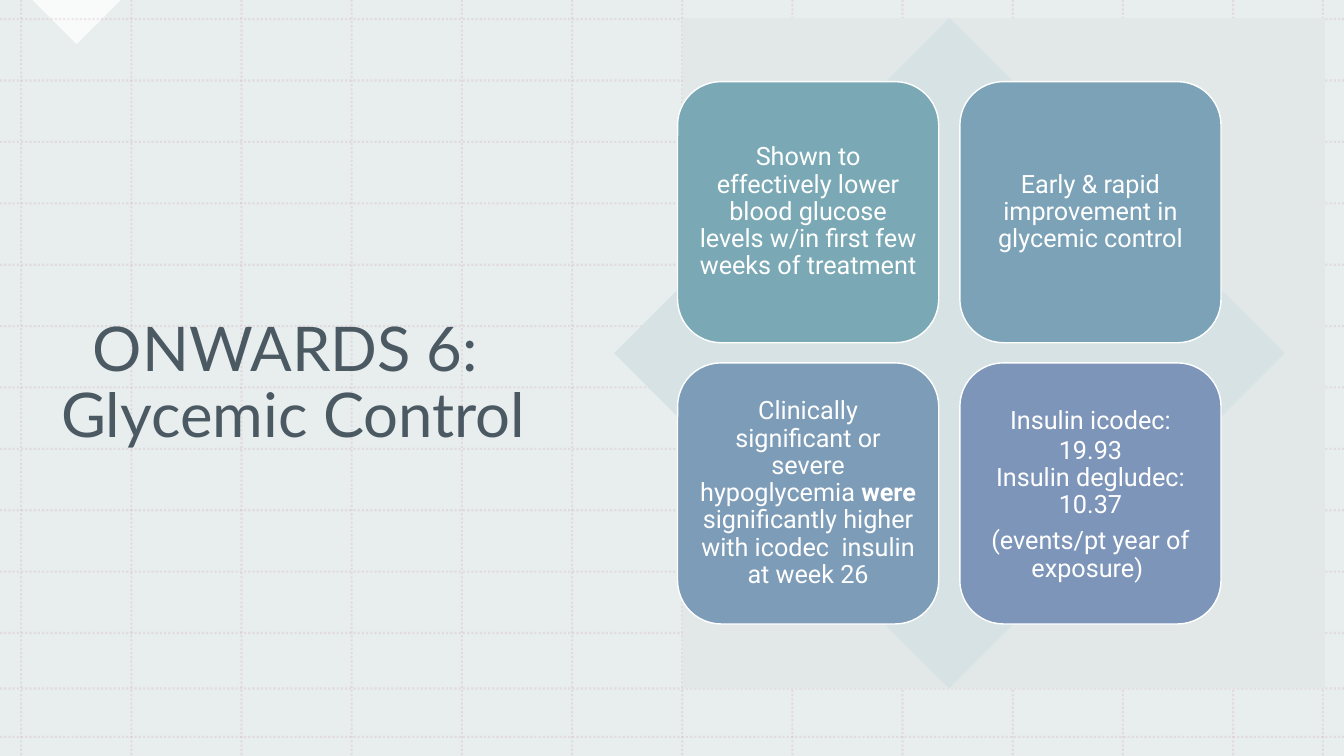
from lxml import etree
from pptx import Presentation
from pptx.dml.color import RGBColor
from pptx.enum.dml import MSO_LINE
from pptx.enum.shapes import MSO_CONNECTOR, MSO_SHAPE
from pptx.enum.text import MSO_ANCHOR, PP_ALIGN
from pptx.oxml.ns import qn
from pptx.util import Inches, Pt

STRAIGHT = MSO_CONNECTOR.STRAIGHT
RECTANGLE, DIAMOND = MSO_SHAPE.RECTANGLE, MSO_SHAPE.DIAMOND
ROUNDED, RIGHT_TRIANGLE = MSO_SHAPE.ROUNDED_RECTANGLE, MSO_SHAPE.RIGHT_TRIANGLE
DOTTED = MSO_LINE.ROUND_DOT
MIDDLE, CENTER = MSO_ANCHOR.MIDDLE, PP_ALIGN.CENTER
WIDTH, HEIGHT = 13.33, 7.5


def paint(fill, color, opacity=100):
    fill.solid()
    fill.fore_color.rgb = RGBColor.from_string(color)
    if opacity < 100:
        srgb = fill._xPr.find(qn("a:solidFill")).find(qn("a:srgbClr"))
        etree.SubElement(srgb, qn("a:alpha")).set("val", str(opacity * 1000))


def add_block(kind, left, top, width, height, color, opacity=100):
    block = slide.shapes.add_shape(
        kind, Inches(left), Inches(top), Inches(width), Inches(height))
    block.shadow.inherit = False
    paint(block.fill, color, opacity)
    block.line.fill.background()
    return block


prs = Presentation()
prs.slide_width, prs.slide_height = Inches(WIDTH), Inches(HEIGHT)
slide = prs.slides.add_slide(prs.slide_layouts[6])

# Background and corner tip
paint(slide.background.fill, "E8EDED")
corner = add_block(RIGHT_TRIANGLE, 0.45, -0.31, 0.62, 0.62, "FFFFFF", 75)
corner.rotation = 315

# Dotted grid
column_pitch = (12.23 - 0.21) / 11
row_pitch = (6.28 - 0.19) / 10
columns = [0.21 + column_pitch * i for i in range(12)] + [13.12]
rows = [0.19 + row_pitch * i for i in range(11)] + [6.83, 7.31]
grid = [(x, 0, x, HEIGHT) for x in columns] + [(0, y, WIDTH, y) for y in rows]
for ends in grid:
    rule = slide.shapes.add_connector(STRAIGHT, *[Inches(v) for v in ends])
    paint(rule.line.fill, "C796A6", 20)
    rule.line.width = Pt(1.5)
    rule.line.dash_style = DOTTED
    etree.SubElement(rule._element.spPr, qn("a:effectLst"))

# Title
title = slide.shapes.add_textbox(
    Inches(0.5), Inches(0.79), Inches(4.82), Inches(6.05)).text_frame
title.word_wrap = True
title.vertical_anchor = MIDDLE
heading = title.paragraphs[0]
heading.text = "ONWARDS 6: \vGlycemic Control"
heading.alignment = CENTER
heading.line_spacing = 0.9
for run in heading.runs:
    run.font.name = "Lato"
    run.font.size = Pt(44)
    paint(run.font.fill, "243441", 80)

# Panel and diamond behind the cards
add_block(RECTANGLE, 6.77, 0.18, 6.37, 6.65, "E2E8E8")
add_block(DIAMOND, 6.09, 0.18, 6.65, 6.65, "D7E2E5")

# Four cards: colour, then paragraphs of (text, bold) runs
cards = [
    ("7AA9B5", [[("Shown to effectively lower blood glucose levels w/in first "
                  "few weeks of treatment", False)]]),
    ("7BA2B7", [[("Early & rapid improvement in glycemic control", False)]]),
    ("7D9CB8", [[("Clinically significant or severe hypoglycemia ", False),
                 ("were", True),
                 (" significantly higher with icodec  insulin at week 26", False)]]),
    ("7E95BA", [[("Insulin icodec: 19.93", False)],
                [("Insulin degludec: 10.37", False)],
                [("(events/pt year of exposure) ", False)]]),
]
card_frame = {
    "word_wrap": True, "vertical_anchor": MIDDLE,
    "margin_left": Inches(0.07), "margin_right": Inches(0.07),
    "margin_top": Inches(0.07), "margin_bottom": Inches(0.07),
}
card_paragraph = {"alignment": CENTER, "line_spacing": 0.9, "space_after": Pt(6.3)}
lead_paragraph = {"alignment": CENTER, "line_spacing": 1.0, "space_after": Pt(0)}
card_font = {"name": "Roboto", "size": Pt(18)}

for i, (color, paragraphs) in enumerate(cards):
    row, column = divmod(i, 2)
    card = add_block(ROUNDED, 6.72 + 2.8 * column, 0.81 + 2.79 * row, 2.59, 2.59, color)
    paint(card.line.fill, "FFFFFF")
    card.line.width = Pt(1)
    frame = card.text_frame
    for name, value in card_frame.items():
        setattr(frame, name, value)
    for n, runs in enumerate(paragraphs):
        paragraph = frame.add_paragraph() if n else frame.paragraphs[0]
        leads = n == 0 and len(paragraphs) > 1
        for name, value in (lead_paragraph if leads else card_paragraph).items():
            setattr(paragraph, name, value)
        for text, bold in runs:
            run = paragraph.add_run()
            run.text = text
            run.font.bold = bold
            for name, value in card_font.items():
                setattr(run.font, name, value)
            paint(run.font.fill, "FFFFFF")

prs.save("out.pptx")
